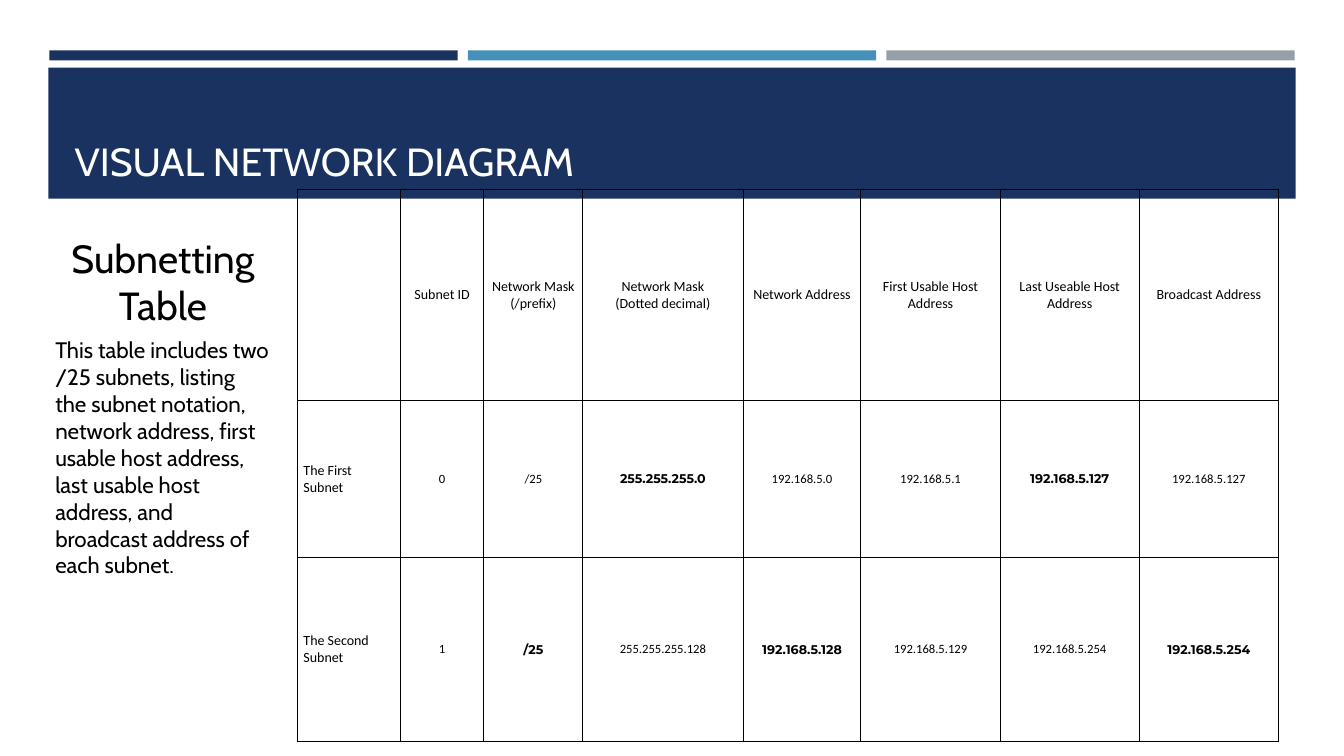
"""Build a slide with a subnetting table and its explanation."""
from lxml import etree
from pptx import Presentation
from pptx.dml.color import RGBColor
from pptx.enum import shapes, text
from pptx.oxml import ns
from pptx.util import Inches, Pt


def paint(fill, color):
    fill.solid()
    fill.fore_color.rgb = RGBColor.from_string(color)


def style(frame, font, size, color="000000", bold=False, align=text.PP_ALIGN.LEFT):
    for para in frame.paragraphs:
        para.alignment = align
        for span in para.runs:
            span.font.name = font
            span.font.size = Pt(size)
            span.font.bold = bold
            span.font.color.rgb = RGBColor.from_string(color)


deck = Presentation()
deck.slide_width = Inches(13.33)
deck.slide_height = Inches(7.5)
page = deck.slides.add_slide(deck.slide_layouts[5])

bars = [
    (0.49, 0.5, 4.05, 0.1, "1A3260"),
    (4.64, 0.5, 4.05, 0.1, "4590B8"),
    (8.79, 0.5, 4.05, 0.1, "969FA7"),
    (0.48, 0.67, 12.37, 1.3, "1A3260"),
]
for left, top, width, height, color in bars:
    bar = page.shapes.add_shape(shapes.MSO_SHAPE.RECTANGLE, Inches(left), Inches(top),
                                Inches(width), Inches(height))
    paint(bar.fill, color)
    bar.line.fill.background()
    bar.shadow.inherit = False

title = page.shapes.title
title.left, title.top = Inches(0.64), Inches(0.77)
title.width, title.height = Inches(12.06), Inches(1.11)
title.text_frame.text = "VISUAL NETWORK DIAGRAM"
title.text_frame.vertical_anchor = text.MSO_ANCHOR.BOTTOM
style(title.text_frame, "Cabin", 28, "FFFFFF")
page.shapes._spTree.append(title._element)

rows = [
    ["", "Subnet ID", "Network Mask\n(/prefix)", "Network Mask\n(Dotted decimal)",
     "Network Address", "First Usable Host Address", "Last Useable Host Address",
     "Broadcast Address"],
    ["The First Subnet", "0", "/25", "255.255.255.0", "192.168.5.0", "192.168.5.1",
     "192.168.5.127", "192.168.5.127"],
    ["The Second Subnet", "1", "/25", "255.255.255.128", "192.168.5.128", "192.168.5.129",
     "192.168.5.254", "192.168.5.254"],
]
bold_cells = {(1, 3), (1, 6), (2, 2), (2, 4), (2, 7)}
column_widths = [1.02, 0.83, 0.98, 1.59, 1.17, 1.38, 1.38, 1.38]
row_heights = [2.09, 1.56, 1.83]

table = page.shapes.add_table(len(rows), len(column_widths), Inches(2.95), Inches(1.88),
                              Inches(9.74), Inches(5.47)).table
table.first_row = False
table.horz_banding = False
for column, width in zip(table.columns, column_widths):
    column.width = Inches(width)
for row, height in zip(table.rows, row_heights):
    row.height = Inches(height)

for row_index, row in enumerate(rows):
    for column_index, words in enumerate(row):
        cell = table.cell(row_index, column_index)
        cell.text_frame.text = words
        cell.vertical_anchor = text.MSO_ANCHOR.MIDDLE
        cell.margin_left = cell.margin_right = Inches(0.06)
        cell.margin_top = cell.margin_bottom = Inches(0.04)
        cell.fill.background()
        bold = (row_index, column_index) in bold_cells
        label = row_index == 0 or column_index == 0
        align = text.PP_ALIGN.CENTER if column_index else text.PP_ALIGN.LEFT
        style(cell.text_frame, "Montserrat" if bold else "Calibri", 10 if label else 9,
              bold=bold, align=align)
        properties = cell._tc.get_or_add_tcPr()
        for position, side in enumerate(["lnL", "lnR", "lnT", "lnB"]):
            border = etree.Element(ns.qn("a:" + side), w=str(Pt(0.75)))
            fill = etree.SubElement(border, ns.qn("a:solidFill"))
            etree.SubElement(fill, ns.qn("a:srgbClr"), val="000000")
            properties.insert(position, border)

notes = [
    (3.29, 3.17, 16, text.MSO_ANCHOR.TOP, text.PP_ALIGN.LEFT,
     "This table includes two /25 subnets, listing the subnet notation, network address, "
     "first usable host address, last usable host address, and broadcast address of each "
     "subnet."),
    (2.29, 1, 28, text.MSO_ANCHOR.MIDDLE, text.PP_ALIGN.CENTER, "Subnetting Table"),
]
for top, height, size, anchor, align, words in notes:
    box = page.shapes.add_textbox(Inches(0.45), Inches(top), Inches(2.33), Inches(height))
    box.text_frame.word_wrap = True
    box.text_frame.vertical_anchor = anchor
    box.text_frame.text = words
    style(box.text_frame, "Cabin", size, align=align)

deck.save("out.pptx")
